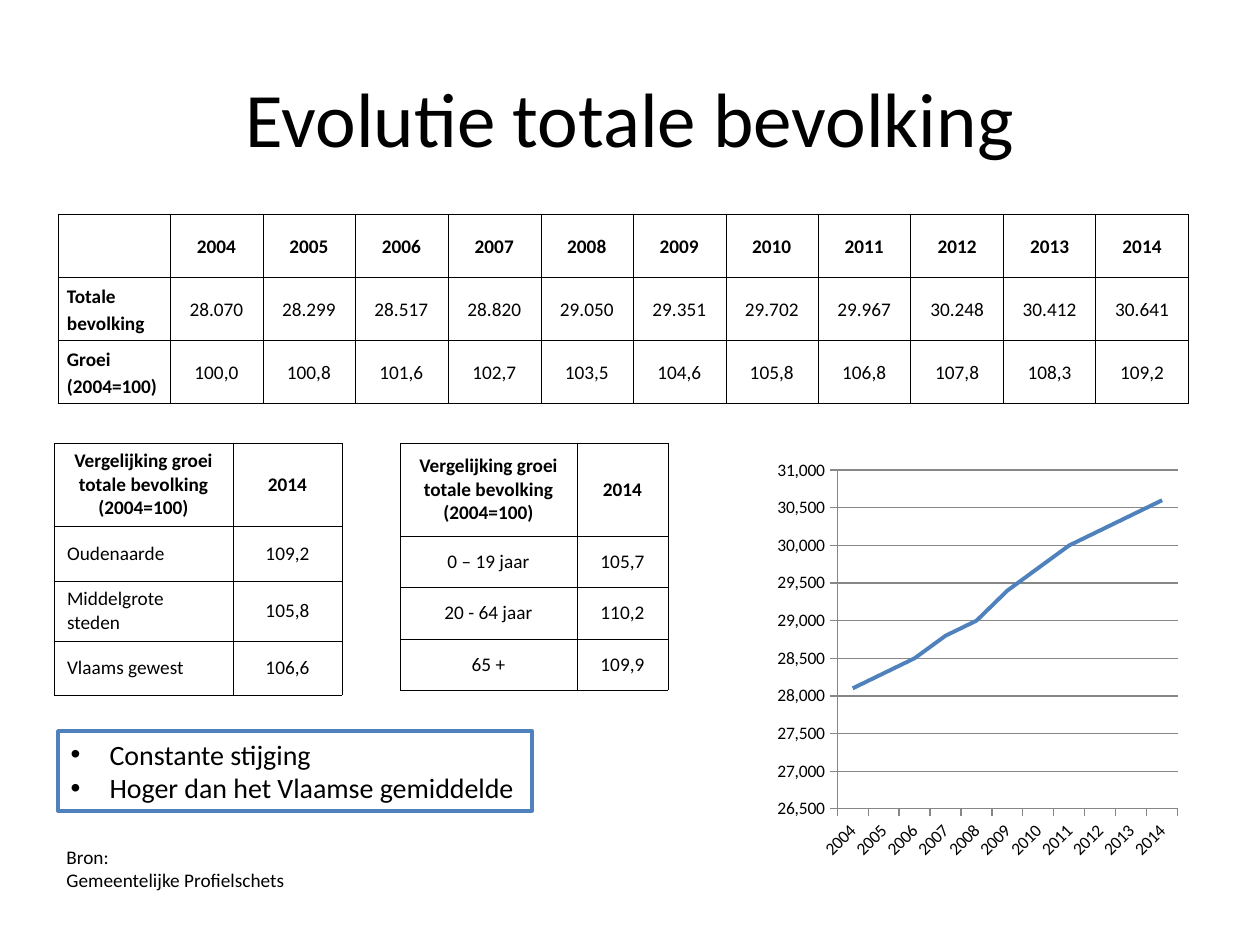
from dataclasses import dataclass

from lxml import etree
from pptx import Presentation
from pptx.chart.data import CategoryChartData
from pptx.dml.color import RGBColor
from pptx.enum.chart import XL_CHART_TYPE, XL_MARKER_STYLE, XL_TICK_MARK
from pptx.enum.text import MSO_ANCHOR, MSO_AUTO_SIZE, PP_ALIGN
from pptx.oxml.ns import qn
from pptx.util import Pt

EMU_PER_PX = 914400 / 126
FONT = "Calibri"
BLACK = RGBColor(0x00, 0x00, 0x00)
WHITE = RGBColor(0xFF, 0xFF, 0xFF)
BLUE = RGBColor(0x4F, 0x81, 0xBD)
GRAY = RGBColor(0x87, 0x87, 0x87)
LEFT, CENTER = PP_ALIGN.LEFT, PP_ALIGN.CENTER
MIDDLE = MSO_ANCHOR.MIDDLE
FIT_SHAPE = MSO_AUTO_SIZE.SHAPE_TO_FIT_TEXT
LINE_CHART = XL_CHART_TYPE.LINE
NO_MARKER = XL_MARKER_STYLE.NONE
TICK_OUTSIDE = XL_TICK_MARK.OUTSIDE

YEARS = [str(year) for year in range(2004, 2015)]
POPULATION = [28070, 28299, 28517, 28820, 29050, 29351,
              29702, 29967, 30248, 30412, 30641]
GROWTH = ["100,0", "100,8", "101,6", "102,7", "103,5", "104,6",
          "105,8", "106,8", "107,8", "108,3", "109,2"]
COMPARISON_HEADER = ["Vergelijking groei totale bevolking\n(2004=100)", "2014"]


@dataclass(frozen=True)
class Box:
    left: int
    top: int
    width: int
    height: int

    def emu(self) -> list[int]:
        return [px(n) for n in (self.left, self.top, self.width, self.height)]


@dataclass(frozen=True)
class DataTable:
    left: int
    top: int
    columns: list[int]
    rows: list[int]
    cells: list[list[str]]
    label_align: PP_ALIGN = LEFT
    bold_labels: bool = False
    line_spacing: float = 1.0
    side_margin: int = 13
    end_margin: int = 6


def split_evenly(total: int, count: int) -> list[int]:
    """Divide a length into whole parts that differ by one at most."""
    edges = [round(total * i / count) for i in range(count + 1)]
    return [end - start for start, end in zip(edges, edges[1:])]


TABLES = [
    DataTable(
        58, 214, [112, *split_evenly(1019, len(YEARS))], [63] * 3,
        [["", *YEARS],
         ["Totale bevolking", *(f"{n:,}".replace(",", ".") for n in POPULATION)],
         ["Groei\n(2004=100)", *GROWTH]],
        bold_labels=True, line_spacing=1.15, side_margin=9, end_margin=0),
    DataTable(
        54, 443, [179, 109], [83, 55, 60, 54],
        [COMPARISON_HEADER, ["Oudenaarde", "109,2"],
         ["Middelgrote steden", "105,8"], ["Vlaams gewest", "106,6"]]),
    DataTable(
        400, 443, [177, 91], [93, 51, 52, 51],
        [COMPARISON_HEADER, ["0 – 19 jaar", "105,7"],
         ["20 - 64 jaar", "110,2"], ["65 +", "109,9"]],
        label_align=CENTER),
]


def px(length: int) -> int:
    return round(length * EMU_PER_PX)


def place(shape, box: Box) -> None:
    shape.left, shape.top, shape.width, shape.height = box.emu()


def style_font(font, size: int, bold: bool = False) -> None:
    font.name, font.size, font.bold = FONT, Pt(size), bold
    font.color.rgb = BLACK


def write(frame, text: str, size: int, align: PP_ALIGN = LEFT,
          bold: bool = False, spacing: float = 1.0) -> None:
    frame.text = text
    for paragraph in frame.paragraphs:
        paragraph.alignment = align
        paragraph.line_spacing = spacing
        for run in paragraph.runs:
            style_font(run.font, size, bold)


def add_borders(cell) -> None:
    """Put a thin black line on each side; lines precede the fill in tcPr."""
    properties = cell._tc.get_or_add_tcPr()
    for position, side in enumerate(("lnL", "lnR", "lnT", "lnB")):
        border = etree.Element(qn(f"a:{side}"), w=str(Pt(0.25)))
        fill = etree.SubElement(border, qn("a:solidFill"))
        etree.SubElement(fill, qn("a:srgbClr"), val=str(BLACK))
        properties.insert(position, border)


def add_data_table(slide, spec: DataTable) -> None:
    box = Box(spec.left, spec.top, sum(spec.columns), sum(spec.rows))
    table = slide.shapes.add_table(
        len(spec.rows), len(spec.columns), *box.emu()).table
    table.first_row = table.horz_banding = False
    for column, width in zip(table.columns, spec.columns):
        column.width = px(width)
    for row, height in zip(table.rows, spec.rows):
        row.height = px(height)
    for r, texts in enumerate(spec.cells):
        for c, text in enumerate(texts):
            cell = table.cell(r, c)
            is_label = r > 0 and c == 0
            write(cell.text_frame, text, 11,
                  spec.label_align if is_label else CENTER,
                  r == 0 or (is_label and spec.bold_labels), spec.line_spacing)
            cell.vertical_anchor = MIDDLE
            cell.margin_left = cell.margin_right = px(spec.side_margin)
            cell.margin_top = cell.margin_bottom = px(spec.end_margin)
            cell.fill.solid()
            cell.fill.fore_color.rgb = WHITE
            add_borders(cell)


def add_population_chart(slide, box: Box) -> None:
    data = CategoryChartData(number_format="#,##0")
    data.categories = YEARS
    data.add_series("Totale bevolking", [round(n, -2) for n in POPULATION])
    chart = slide.shapes.add_chart(LINE_CHART, *box.emu(), data).chart
    chart.has_legend = chart.has_title = False
    style_font(chart.font, 10)
    plot = chart.plots[0]
    plot.vary_by_categories = False
    line = plot.series[0]
    line.smooth = False
    line.format.line.color.rgb = BLUE
    line.format.line.width = Pt(2.25)
    line.marker.style = NO_MARKER
    for axis in (chart.category_axis, chart.value_axis):
        axis.major_tick_mark = TICK_OUTSIDE
        axis.format.line.color.rgb = GRAY
        style_font(axis.tick_labels.font, 10)
    years_body = chart.category_axis._element.find(
        f"{qn('c:txPr')}/{qn('a:bodyPr')}")
    years_body.set("rot", str(-45 * 60000))
    values = chart.value_axis
    values.minimum_scale, values.maximum_scale = 26500, 31000
    values.major_unit = 500
    values.tick_labels.number_format = "#,##0"
    values.tick_labels.number_format_is_linked = False
    values.has_major_gridlines = True
    values.major_gridlines.format.line.color.rgb = GRAY


def format_conclusions(conclusions) -> None:
    place(conclusions, Box(58, 731, 474, 81))
    conclusions.fill.solid()
    conclusions.fill.fore_color.rgb = WHITE
    conclusions.line.color.rgb = BLUE
    conclusions.line.width = Pt(2)
    frame = conclusions.text_frame
    write(frame, "Constante stijging\nHoger dan het Vlaamse gemiddelde", 16)
    frame.word_wrap = False
    frame.auto_size = FIT_SHAPE
    for paragraph in frame.paragraphs:
        paragraph.space_before = Pt(0)
        properties = paragraph._p.get_or_add_pPr()
        properties.set("marL", str(px(39)))
        properties.set("indent", str(px(-39)))
        etree.SubElement(properties, qn("a:buChar"), char="•")


def main() -> None:
    presentation = Presentation()
    presentation.slide_width, presentation.slide_height = px(1260), px(945)
    slide = presentation.slides.add_slide(presentation.slide_layouts[1])

    title = slide.shapes.title
    place(title, Box(63, 38, 1134, 157))
    write(title.text_frame, "Evolutie totale bevolking", 44, CENTER)
    title.text_frame.vertical_anchor = MIDDLE
    format_conclusions(slide.placeholders[1])

    for spec in TABLES:
        add_data_table(slide, spec)
    add_population_chart(slide, Box(769, 452, 417, 416))

    source = slide.shapes.add_textbox(*Box(54, 839, 246, 59).emu()).text_frame
    write(source, "Bron:\nGemeentelijke Profielschets", 11)
    source.word_wrap = False
    source.auto_size = FIT_SHAPE

    presentation.save("out.pptx")


if __name__ == "__main__":
    main()
